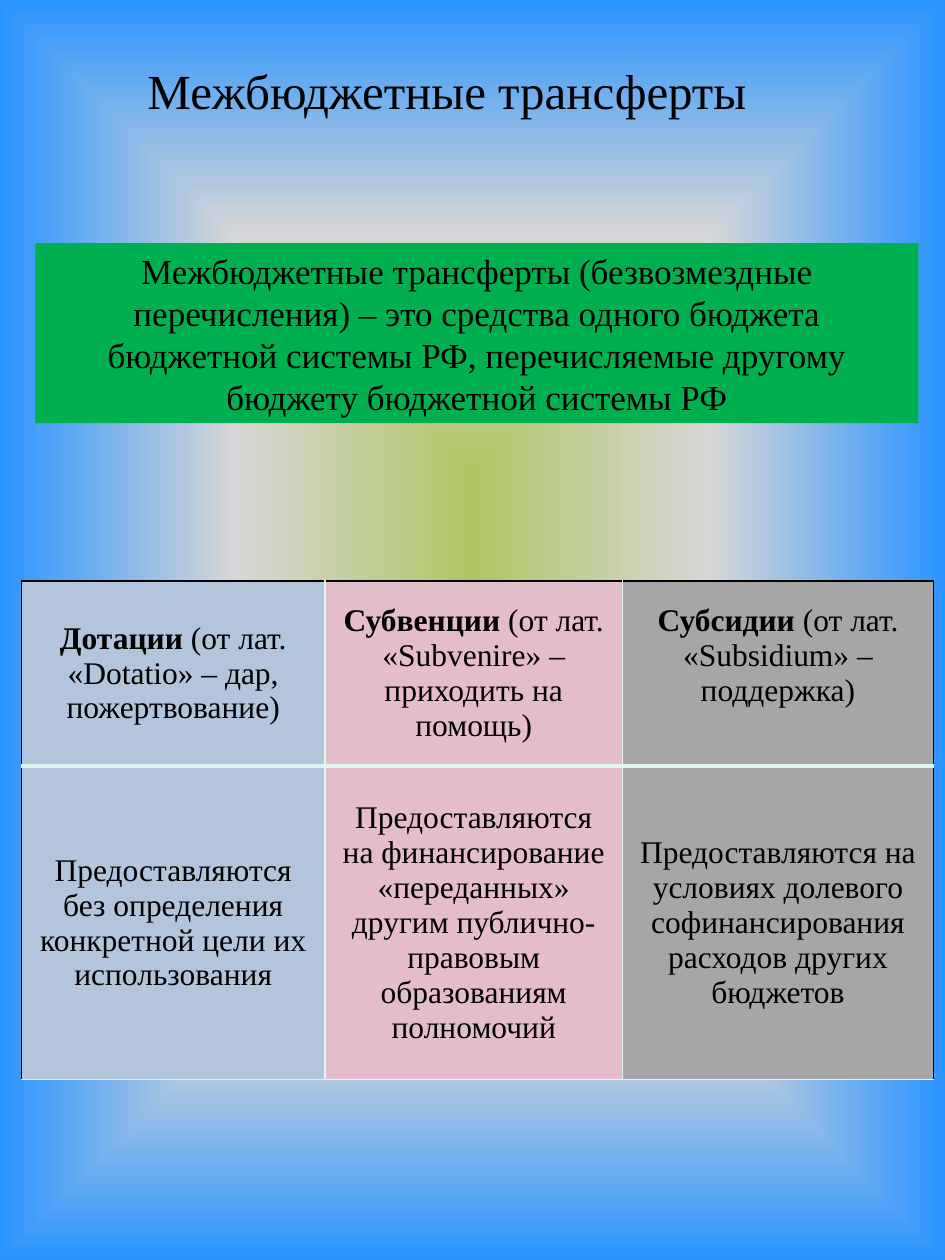
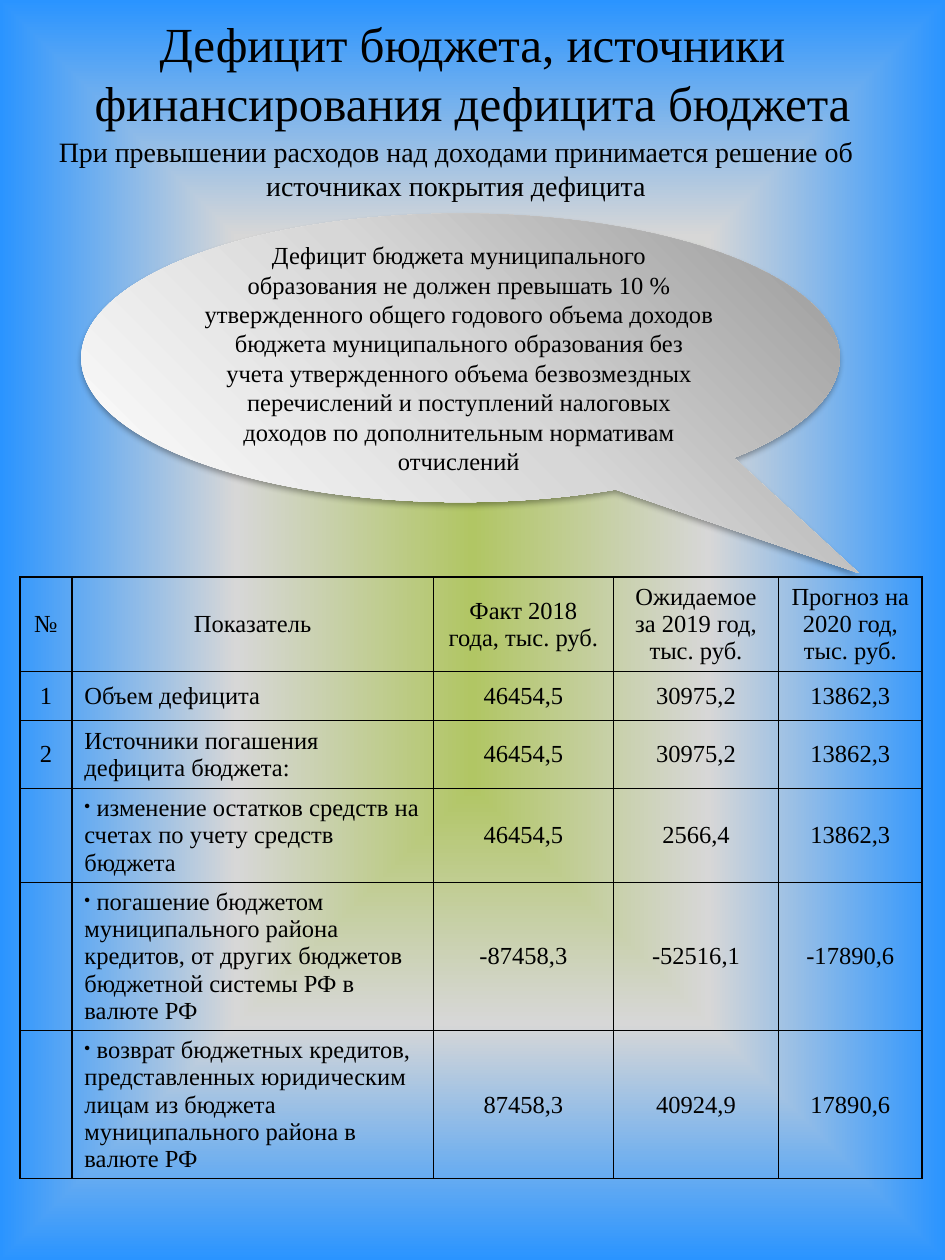
import pptx
import pptx.util
import pptx.oxml
import pptx.oxml.ns
import pptx.dml.color
import pptx.enum.shapes
import pptx.enum.text

Inches = pptx.util.Inches
Pt = pptx.util.Pt
qn = pptx.oxml.ns.qn
Align = pptx.enum.text.PP_ALIGN
Anchor = pptx.enum.text.MSO_ANCHOR
Shape = pptx.enum.shapes.MSO_SHAPE

FONT = "Times New Roman"
COLORS = {
    "ink": "000000", "lime": "B1C664", "mist": "D7D7D7", "sky": "2A94FF",
    "green": "00B050", "blue": "B3C5DA", "pink": "E3BECA", "gray": "A6A6A6",
    "pale": "DEF6F1", "steel": "979797", "white": "FFFFFF",
}
KINDS = [
    ("blue", "Дотации", " (от лат. «Dotatio» – дар, пожертвование)",
     "Предоставляются без определения конкретной цели их использования"),
    ("pink", "Субвенции", " (от лат. «Subvenire» – приходить на помощь)",
     "Предоставляются на финансирование «переданных» другим "
     "публично-правовым образованиям полномочий"),
    ("gray", "Субсидии", " (от лат. «Subsidium» – поддержка)",
     "Предоставляются на условиях долевого софинансирования расходов других бюджетов"),
]
DEBT = [
    ("№", "Показатель", "Факт 2018 года, тыс. руб.",
     "Ожидаемое за 2019 год, тыс. руб.", "Прогноз на 2020 год, тыс. руб."),
    ("1", "Объем дефицита", "46454,5", "30975,2", "13862,3"),
    ("2", "Источники погашения дефицита бюджета:", "46454,5", "30975,2", "13862,3"),
    ("", " изменение остатков средств на счетах по учету средств бюджета",
     "46454,5", "2566,4", "13862,3"),
    ("", " погашение бюджетом муниципального района кредитов, от других "
     "бюджетов бюджетной системы РФ в валюте РФ", "-87458,3", "-52516,1", "-17890,6"),
    ("", " возврат бюджетных кредитов, представленных юридическим лицам "
     "из бюджета муниципального района в валюте РФ", "87458,3", "40924,9", "17890,6"),
]


def rgb(name):
    return pptx.dml.color.RGBColor.from_string(COLORS[name])


def node(text):
    return pptx.oxml.parse_xml(text.replace(" ", f" {pptx.oxml.ns.nsdecls('a')} ", 1))


def blend(fill, parent, names, kind, focus, tile=""):
    fill.solid()
    stops = "".join(
        f'<a:gs pos="{i * 50000}"><a:srgbClr val="{COLORS[name]}"/></a:gs>'
        for i, name in enumerate(names))
    parent.replace(parent.find(qn("a:solidFill")), node(
        f'<a:gradFill rotWithShape="1"><a:gsLst>{stops}</a:gsLst>'
        f'<a:path path="{kind}"><a:fillToRect {focus}/></a:path>{tile}</a:gradFill>'))


def style(frame, size, align=Align.CENTER, anchor=Anchor.TOP):
    frame.word_wrap = True
    frame.vertical_anchor = anchor
    for para in frame.paragraphs:
        para.alignment = align
        for run in para.runs:
            run.font.size = Pt(size)
            run.font.name = FONT
            run.font.color.rgb = rgb("ink")


def place(shape, box):
    shape.left, shape.top, shape.width, shape.height = map(Inches, box)


def title(slide, box, text, align, anchor):
    shape = slide.shapes.title
    place(shape, box)
    frame = shape.text_frame
    frame.text = text
    frame.auto_size = pptx.enum.text.MSO_AUTO_SIZE.NONE
    style(frame, 28, align, anchor)


def panel(slide, box, text):
    shape = slide.shapes.add_shape(Shape.RECTANGLE, *map(Inches, box))
    shape.shadow.inherit = False
    shape.fill.solid()
    shape.fill.fore_color.rgb = rgb("green")
    shape.line.fill.background()
    shape.text_frame.text = text
    style(shape.text_frame, 20)


def note(slide, box, text):
    shape = slide.shapes.add_textbox(*map(Inches, box))
    shape.text_frame.text = text
    style(shape.text_frame, 16)


def bubble(slide, box, text):
    shape = slide.shapes.add_shape(Shape.OVAL_CALLOUT, *map(Inches, box))
    shape.rotation = 270
    shape.adjustments[0] = -0.746
    shape.adjustments[1] = 0.525
    shape.line.fill.background()
    shape.shadow.inherit = False
    props = shape.element.spPr
    blend(shape.fill, props, ("steel", "mist", "white"), "circle",
          'l="100000" b="100000"', '<a:tileRect t="-100000" r="-100000"/>')
    props.find(qn("a:effectLst")).append(node(
        '<a:outerShdw blurRad="44450" dist="27940" dir="5400000" rotWithShape="0">'
        f'<a:srgbClr val="{COLORS["ink"]}"><a:alpha val="32000"/></a:srgbClr></a:outerShdw>'))
    frame = shape.text_frame
    frame.text = text
    style(frame, 14, anchor=Anchor.MIDDLE)
    frame._txBody.bodyPr.set("vert", "eaVert")


def grid(slide, box, cols, rows):
    table = slide.shapes.add_table(len(rows), len(cols), *map(Inches, box)).table
    table.first_row = table.horz_banding = False
    for col, width in zip(table.columns, cols):
        col.width = Inches(width)
    for row, height in zip(table.rows, rows):
        row.height = Inches(height)
    return table


def edges(cell, **sides):
    props = cell._tc.get_or_add_tcPr()
    for side in "LRTB":
        name, width = sides[side]
        props.append(node(
            f'<a:ln{side} w="{Pt(width)}"><a:solidFill>'
            f'<a:srgbClr val="{COLORS[name]}"/></a:solidFill></a:ln{side}>'))


def settle(cell, size, align=Align.CENTER):
    cell.vertical_anchor = Anchor.MIDDLE
    for para in cell.text_frame.paragraphs:
        para.alignment = align
    style(cell.text_frame, size, align, None)


def kinds(slide, box):
    table = grid(slide, box, (2.41, 2.36, 2.47), (1.47, 2.49))
    ink, pale, thick = ("ink", 1), ("pale", 1), ("pale", 3)
    last = len(KINDS) - 1
    for c, (color, term, origin, use) in enumerate(KINDS):
        for r in range(2):
            cell = table.cell(r, c)
            edges(cell, L=pale if c else ink, R=ink if c == last else pale,
                  T=thick if r else ink, B=pale if r else thick)
            cell.fill.solid()
            cell.fill.fore_color.rgb = rgb(color)
            para = cell.text_frame.paragraphs[0]
            para.text = use if r else term
            if r == 0:
                para.runs[0].font.bold = True
                para.add_run().text = origin
            settle(cell, 18)
    table.cell(0, last).margin_bottom = Inches(0.33)


def debt(slide, box):
    table = grid(slide, box, (0.41, 2.87, 1.43, 1.31, 1.14),
                 (0.75, 0.39) + (0.54,) * 4)
    line = dict.fromkeys("LRTB", ("ink", 1))
    for r, row in enumerate(DEBT):
        for c, text in enumerate(row):
            cell = table.cell(r, c)
            edges(cell, **line)
            cell.fill.background()
            cell.text_frame.text = text
            settle(cell, 14, Align.LEFT if r and c == 1 else Align.CENTER)
        if not row[0]:
            props = table.cell(r, 1).text_frame.paragraphs[0]._p.get_or_add_pPr()
            props.set("marL", "0")
            props.set("indent", "0")
            props.append(node('<a:buSzPct val="70000"/>'))
            props.append(node('<a:buChar char="•"/>'))


def main():
    deck = pptx.Presentation()
    deck.slide_width, deck.slide_height = Inches(7.5), Inches(10)
    master = deck.slide_master
    fill = master.background.fill
    fill.solid()
    blend(fill, master.element.find(".//" + qn("p:bgPr")), ("lime", "mist", "sky"),
          "shape", 'l="50000" t="50000" r="50000" b="50000"')
    layout = deck.slide_layouts[5]

    slide = deck.slides.add_slide(layout)
    title(slide, (1.07, 0.43, 4.99, 0.57), "Межбюджетные трансферты",
          Align.LEFT, Anchor.TOP)
    panel(slide, (0.28, 1.93, 7.01, 1.43),
          "Межбюджетные трансферты (безвозмездные перечисления) – это средства "
          "одного бюджета бюджетной системы РФ, перечисляемые другому бюджету "
          "бюджетной системы РФ")
    kinds(slide, (0.17, 4.61, 7.25, 3.96))

    slide = deck.slides.add_slide(layout)
    title(slide, (0, 0, 7.5, 1.15),
          "Дефицит бюджета, источники финансирования дефицита бюджета",
          Align.CENTER, Anchor.MIDDLE)
    bubble(slide, (2.51, -0.17, 2.29, 6.02),
           "Дефицит бюджета муниципального\nобразования не должен превышать 10 % "
           "утвержденного общего годового объема доходов бюджета муниципального "
           "образования без учета утвержденного объема безвозмездных перечислений "
           "и поступлений налоговых доходов по дополнительным нормативам отчислений")
    debt(slide, (0.16, 4.58, 7.15, 5.1))
    note(slide, (0, 1.02, 7.24, 1.02),
         "При превышении расходов над доходами принимается решение "
         "об источниках покрытия дефицита")
    deck.save("out.pptx")


if __name__ == "__main__":
    main()
